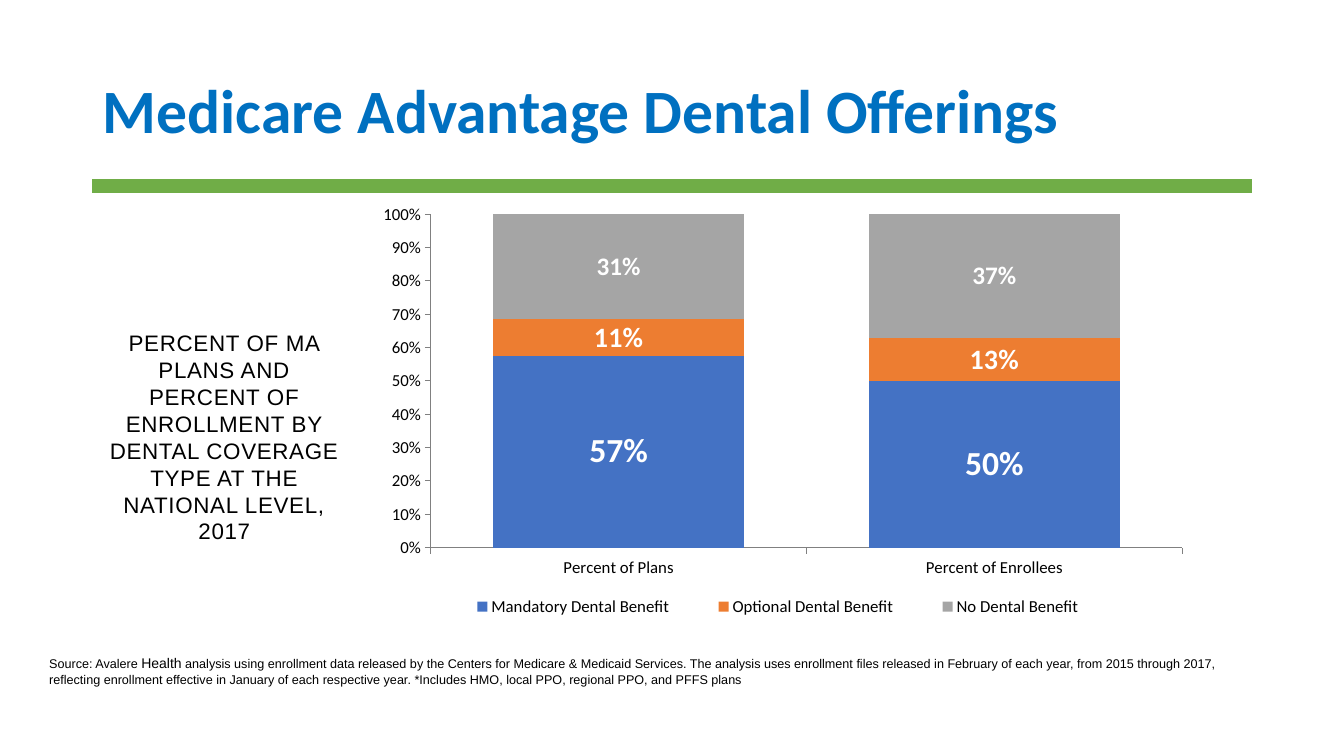
from dataclasses import dataclass

from lxml.etree import SubElement
from pptx import Presentation
from pptx.chart.data import CategoryChartData
from pptx.dml.color import RGBColor
from pptx.enum.chart import XL_CHART_TYPE, XL_LABEL_POSITION, XL_LEGEND_POSITION, XL_TICK_MARK
from pptx.enum.shapes import MSO_CONNECTOR
from pptx.enum.text import MSO_ANCHOR, MSO_AUTO_SIZE, PP_ALIGN
from pptx.oxml import parse_xml
from pptx.oxml.ns import nsdecls, qn
from pptx.util import Cm, Pt


@dataclass(frozen=True)
class Box:
    """Place and size in centimetres."""
    left: float
    top: float
    width: float
    height: float

    def cm(self) -> tuple:
        """Return the four lengths."""
        return Cm(self.left), Cm(self.top), Cm(self.width), Cm(self.height)


@dataclass(frozen=True)
class Span:
    """A run of text with its look."""
    text: str
    size: float
    face: str = "Arial"
    color: str = "000000"
    bold: bool = False
    space: int = 0


@dataclass(frozen=True)
class Band:
    """A chart series with its label size."""
    name: str
    vals: tuple
    color: str
    size: int


TITLE = Span("Medicare Advantage Dental Offerings", 44, "Calibri", "0070C0", True)
NOTE = Span("PERCENT OF MA PLANS AND PERCENT OF ENROLLMENT BY DENTAL COVERAGE "
            "TYPE AT THE NATIONAL LEVEL, 2017", 16, space=50)
SOURCE = (
    Span("Source: Avalere ", 9),
    Span("Health", 10),
    Span(" analysis using enrollment data released by the Centers for Medicare & Medicaid "
         "Services. The analysis uses enrollment files released in February of each year, "
         "from 2015 through 2017, reflecting enrollment effective in January of each "
         "respective year. *Includes HMO, local PPO, regional PPO, and PFFS plans", 9),
)
GROUPS = ("Percent of Plans", "Percent of Enrollees")
BANDS = (
    Band("Mandatory Dental Benefit", (0.57, 0.5), "4472C4", 24),
    Band("Optional Dental Benefit", (0.11, 0.13), "ED7D31", 20),
    Band("No Dental Benefit", (0.31, 0.37), "A5A5A5", 18),
)
PLOT = {"x": 0.171, "y": 0.033, "w": 0.812, "h": 0.695}
LEGEND = {"x": 0.174, "y": 0.811, "w": 0.744, "h": 0.08}


def paint(target, color: str) -> None:
    """Give a colour format or a fill its hex colour."""
    if hasattr(target, "solid"):
        target.solid()
        target = target.fore_color
    target.rgb = RGBColor.from_string(color)


def style(font, size: float, face: str, color: str, bold: bool = False) -> None:
    """Set the look of a font."""
    font.size, font.name, font.bold = Pt(size), face, bold
    paint(font.color, color)


def write(para, *spans: Span) -> None:
    """Add spans to a paragraph run by run."""
    for span in spans:
        run = para.add_run()
        run.text = span.text
        style(run.font, span.size, span.face, span.color, span.bold)
        if span.space:
            run._r.get_or_add_rPr().set("spc", str(span.space))


def add_head(slide) -> None:
    """Fill the title and draw the rule under it."""
    head = slide.shapes.title
    head.left, head.top, head.width, head.height = Box(2.34, 1.02, 29.21, 3.68).cm()
    frame = head.text_frame
    frame.word_wrap = True
    frame.auto_size = MSO_AUTO_SIZE.NONE
    frame.vertical_anchor = MSO_ANCHOR.MIDDLE
    para = frame.paragraphs[0]
    para.alignment, para.line_spacing = PP_ALIGN.LEFT, 0.9
    write(para, TITLE)
    rule = slide.shapes.add_connector(
        MSO_CONNECTOR.STRAIGHT, Cm(2.33), Cm(4.68), Cm(31.55), Cm(4.68))
    rule.line.width = Pt(10)
    paint(rule.line.fill, "70AD47")
    SubElement(rule.element.spPr, qn("a:effectLst"))


def add_text(slide, box: Box, align: PP_ALIGN, *spans: Span) -> None:
    """Add a wrapped text box."""
    frame = slide.shapes.add_textbox(*box.cm()).text_frame
    frame.word_wrap = True
    para = frame.paragraphs[0]
    para.alignment = align
    write(para, *spans)


def lay_out(part, index: int, place: dict, inner: str = "") -> None:
    """Fix the place of a chart part."""
    for old in part.findall(qn("c:layout")):
        part.remove(old)
    modes = "".join(f'<c:{key}Mode val="edge"/>' for key in "xy")
    sizes = "".join(f'<c:{key} val="{val}"/>' for key, val in place.items())
    part.insert(index, parse_xml(
        f'<c:layout {nsdecls("c")}><c:manualLayout>{inner}{modes}{sizes}'
        '</c:manualLayout></c:layout>'))


def add_graph(slide) -> None:
    """Add the stacked column chart."""
    data = CategoryChartData(number_format="0%")
    data.categories = GROUPS
    for band in BANDS:
        data.add_series(band.name, band.vals)
    chart = slide.shapes.add_chart(
        XL_CHART_TYPE.COLUMN_STACKED_100, *Box(6.87, 5, 23.32, 12.09).cm(), data).chart
    style(chart.font, 12, "Calibri", "000000")
    chart.has_title = False
    chart.has_legend = True
    chart.legend.position = XL_LEGEND_POSITION.BOTTOM
    chart.legend.include_in_layout = False
    style(chart.legend.font, 12, "Calibri", "000000")
    for axis in (chart.category_axis, chart.value_axis):
        axis.has_major_gridlines = False
        axis.major_tick_mark = XL_TICK_MARK.OUTSIDE
        axis.minor_tick_mark = XL_TICK_MARK.NONE
        axis.format.line.width = Pt(0.75)
        paint(axis.format.line.fill, "808080")
        style(axis.tick_labels.font, 12, "Calibri", "000000")
    scale = chart.value_axis
    scale.minimum_scale, scale.maximum_scale, scale.major_unit = 0, 1, 0.1
    scale.tick_labels.number_format = "0%"
    scale.tick_labels.number_format_is_linked = False
    plot = chart.plots[0]
    plot.gap_width, plot.overlap, plot.vary_by_categories = 50, 100, False
    for band, series in zip(BANDS, plot.series):
        paint(series.format.fill, band.color)
        labels = series.data_labels
        labels.show_value = True
        labels.number_format, labels.number_format_is_linked = "0%", False
        labels.position = XL_LABEL_POSITION.CENTER
        style(labels.font, band.size, "Calibri", "FFFFFF", True)
    root = chart.element.find(qn("c:chart"))
    lay_out(root.find(qn("c:plotArea")), 0, PLOT, '<c:layoutTarget val="inner"/>')
    lay_out(root.find(qn("c:legend")), 1, LEGEND)


def main() -> None:
    """Build and save the slide."""
    deck = Presentation()
    deck.slide_width, deck.slide_height = Cm(33.87), Cm(19.05)
    slide = deck.slides.add_slide(deck.slide_layouts[5])
    add_head(slide)
    add_text(slide, Box(2.33, 8.18, 6.65, 5.72), PP_ALIGN.CENTER, NOTE)
    add_graph(slide)
    add_text(slide, Box(0.99, 16.38, 31.12, 1.22), PP_ALIGN.LEFT, *SOURCE)
    deck.save("out.pptx")


if __name__ == "__main__":
    main()
